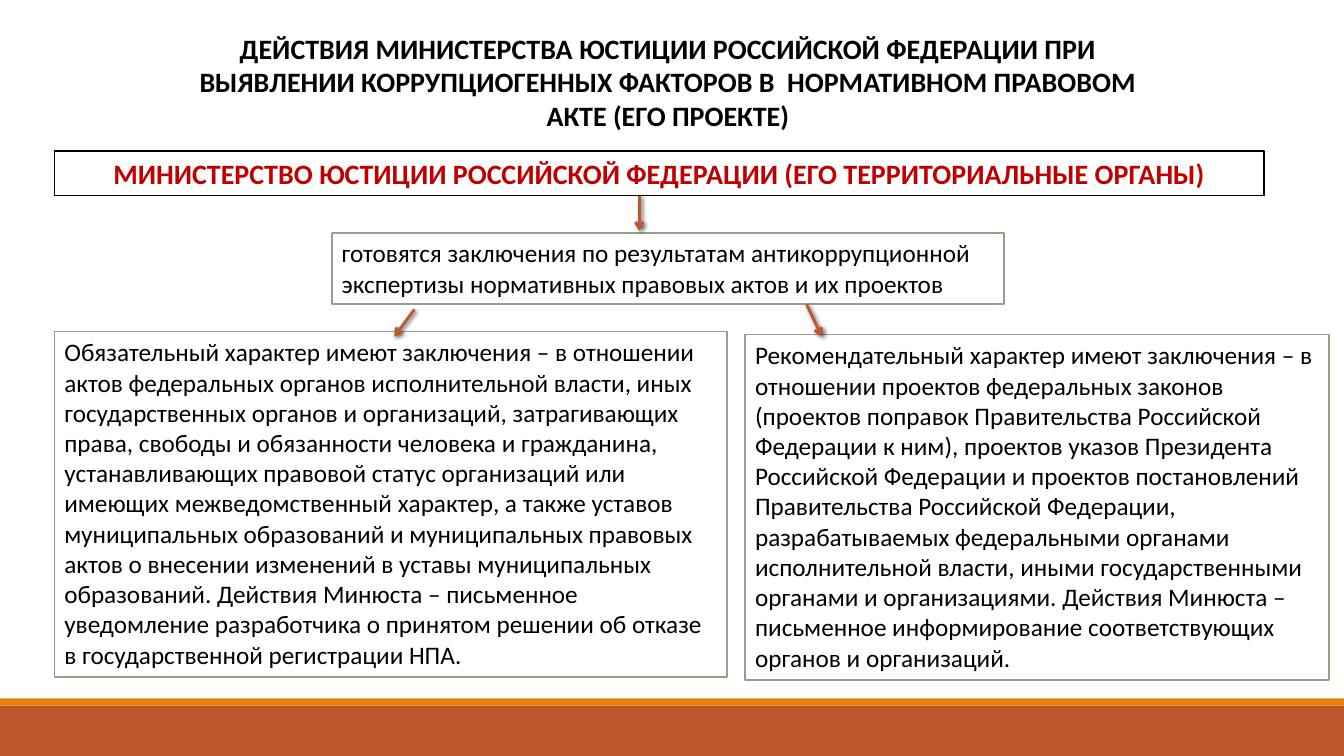
from lxml.etree import SubElement
from pptx import Presentation
from pptx.dml.color import RGBColor
from pptx.enum.shapes import MSO_CONNECTOR, MSO_SHAPE
from pptx.enum.text import MSO_ANCHOR, PP_ALIGN
from pptx.oxml import parse_xml
from pptx.oxml.ns import qn
from pptx.util import Inches, Pt

COLORS = {name: RGBColor.from_string(value) for name, value in {
    "black": "000000", "white": "FFFFFF", "red": "C00000",
    "rust": "BD582C", "orange": "E48312", "sage": "94A088",
}.items()}

ARROW_SHADOW = """
<a:effectLst xmlns:a="http://schemas.openxmlformats.org/drawingml/2006/main">
  <a:outerShdw blurRad="38100" dist="25400" dir="2700000" algn="tl" rotWithShape="0">
    <a:srgbClr val="000000"><a:alpha val="60000"/></a:srgbClr>
  </a:outerShdw>
</a:effectLst>"""


def add_rectangle(left, top, width, height, fill):
    rectangle = slide.shapes.add_shape(
        MSO_SHAPE.RECTANGLE, Inches(left), Inches(top), Inches(width), Inches(height))
    rectangle.shadow.inherit = False
    rectangle.fill.solid()
    rectangle.fill.fore_color.rgb = COLORS[fill]
    rectangle.line.fill.background()
    return rectangle


def write_text(shape, text, size, color, bold, align):
    frame = shape.text_frame
    frame.word_wrap = True
    frame.vertical_anchor = MSO_ANCHOR.TOP
    frame.text = text
    paragraph = frame.paragraphs[0]
    paragraph.alignment = align
    paragraph.font.name = "Calibri"
    paragraph.font.size = Pt(size)
    paragraph.font.bold = bold
    paragraph.font.color.rgb = COLORS[color]


presentation = Presentation()
presentation.slide_width = Inches(13.33)
presentation.slide_height = Inches(7.5)
slide = presentation.slides.add_slide(presentation.slide_layouts[5])

# Footer bands
add_rectangle(0, 7, 13.33, 0.5, "rust")
add_rectangle(0, 6.93, 13.33, 0.07, "orange")

# Title
title = slide.shapes.title
title.left, title.top = Inches(1.85), Inches(0.26)
title.width, title.height = Inches(9.55), Inches(1.11)
write_text(
    title,
    "ДЕЙСТВИЯ МИНИСТЕРСТВА ЮСТИЦИИ РОССИЙСКОЙ ФЕДЕРАЦИИ ПРИ ВЫЯВЛЕНИИ "
    "КОРРУПЦИОГЕННЫХ ФАКТОРОВ В  НОРМАТИВНОМ ПРАВОВОМ АКТЕ (ЕГО ПРОЕКТЕ)",
    20, "black", True, PP_ALIGN.CENTER)

# Ministry heading
ministry = add_rectangle(0.54, 1.5, 12, 0.44, "white")
ministry.line.color.rgb = COLORS["black"]
ministry.line.width = Pt(1.25)
write_text(
    ministry,
    "МИНИСТЕРСТВО ЮСТИЦИИ РОССИЙСКОЙ ФЕДЕРАЦИИ (ЕГО ТЕРРИТОРИАЛЬНЫЕ ОРГАНЫ)",
    20, "red", True, PP_ALIGN.CENTER)

# Conclusions and their two kinds
conclusions = [
    (3.29, 2.31, 6.67, 0.71,
     "готовятся заключения по результатам антикоррупционной экспертизы "
     "нормативных правовых актов и их проектов"),
    (0.54, 3.29, 6.67, 3.43,
     "Обязательный характер имеют заключения – в отношении актов федеральных "
     "органов исполнительной власти, иных государственных органов и организаций, "
     "затрагивающих права, свободы и обязанности человека и гражданина, "
     "устанавливающих правовой статус организаций или имеющих межведомственный "
     "характер, а также уставов муниципальных образований и муниципальных правовых "
     "актов о внесении изменений в уставы муниципальных образований. Действия "
     "Минюста – письменное уведомление разработчика о принятом решении об отказе "
     "в государственной регистрации НПА."),
    (7.39, 3.32, 5.79, 3.43,
     "Рекомендательный характер имеют заключения – в отношении проектов федеральных "
     "законов (проектов поправок Правительства Российской Федерации к ним), проектов "
     "указов Президента Российской Федерации и проектов постановлений Правительства "
     "Российской Федерации, разрабатываемых федеральными органами исполнительной "
     "власти, иными государственными органами и организациями. Действия Минюста – "
     "письменное информирование соответствующих органов и организаций."),
]
for left, top, width, height, text in conclusions:
    conclusion = add_rectangle(left, top, width, height, "white")
    conclusion.line.color.rgb = COLORS["sage"]
    conclusion.line.width = Pt(1.25)
    write_text(conclusion, text, 18, "black", False, PP_ALIGN.LEFT)

# Arrows between the levels
arrow_ends = [(6.34, 1.94, 6.34, 2.29), (4.11, 3.07, 3.91, 3.34), (8, 3.02, 8.15, 3.34)]
for ends in arrow_ends:
    arrow = slide.shapes.add_connector(MSO_CONNECTOR.STRAIGHT, *map(Inches, ends))
    arrow.line.color.rgb = COLORS["rust"]
    arrow.line.width = Pt(2)
    SubElement(arrow.line._get_or_add_ln(), qn("a:tailEnd"), type="arrow")
    arrow._element.spPr.append(parse_xml(ARROW_SHADOW))

presentation.save("out.pptx")
